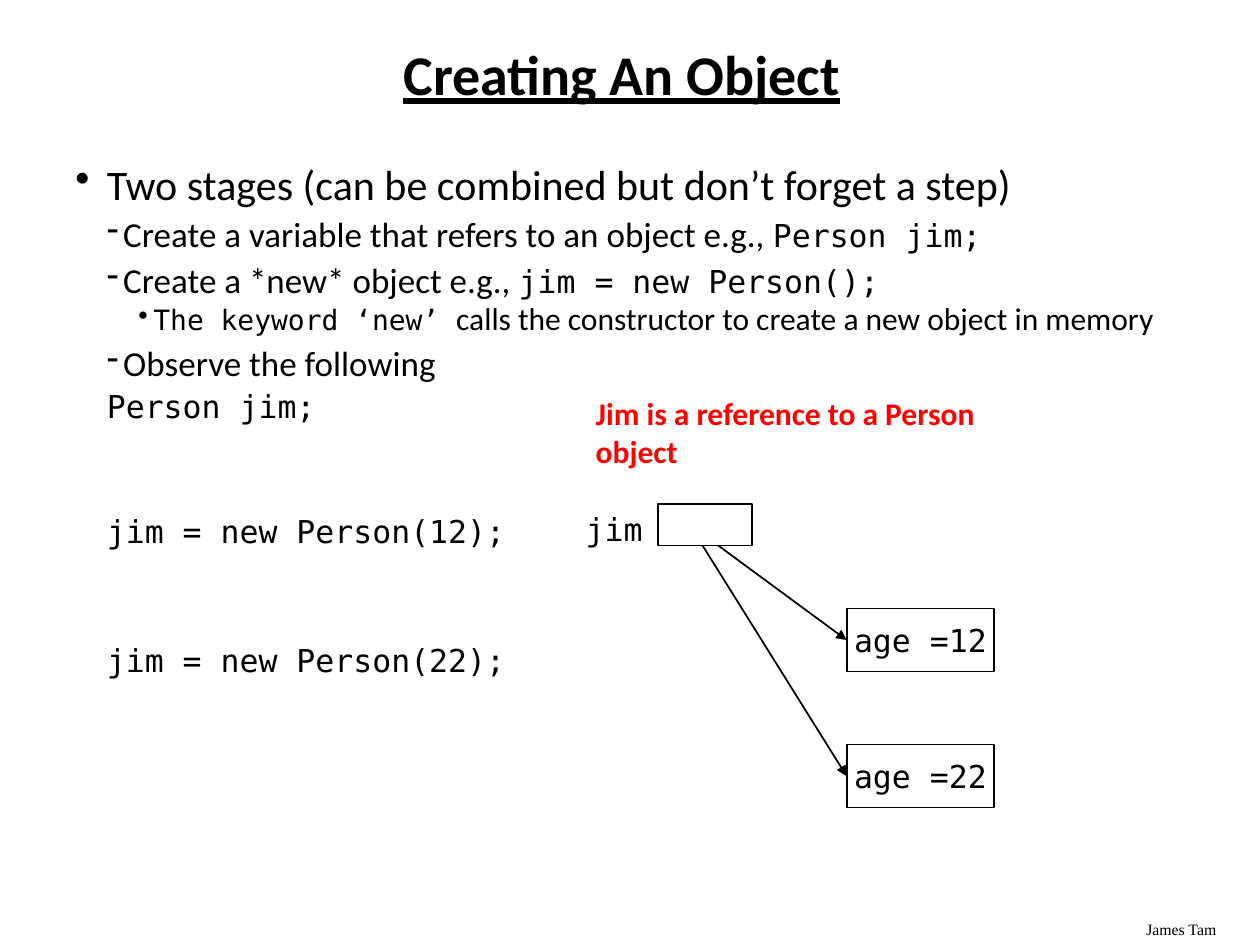
from dataclasses import dataclass

from lxml.etree import SubElement
from pptx import Presentation
from pptx.dml.color import RGBColor
from pptx.enum.shapes import MSO_CONNECTOR as Connector, MSO_SHAPE as Preset
from pptx.enum.text import MSO_ANCHOR as Anchor, PP_ALIGN as Align
from pptx.oxml.ns import qn
from pptx.util import Inches, Pt

BLACK = RGBColor(0, 0, 0)
WHITE = RGBColor(255, 255, 255)
RED = RGBColor(255, 0, 0)
SANS = "Calibri"
MONO = "DejaVu Sans Mono"
SERIF = "Times New Roman"


@dataclass(frozen=True)
class Span:
    text: str
    size: float = 18
    font: str = MONO
    color: RGBColor = BLACK
    bold: bool = False
    underline: bool = False


@dataclass(frozen=True)
class Item:
    spans: tuple[Span, ...]
    margin: float = 0.38
    hanging: float = 0.13
    bullet: str = ""
    before: float = 2
    line_spacing: float = 1


@dataclass(frozen=True)
class PersonBox:
    age: int
    top: float


CODE_GAP = 50
REFERENCE_START = (5.47, 4.16)
BODY = (
    Item((Span("Two stages (can be combined but don’t forget a step)", 24, SANS),),
         0.25, 0.25, "•", 0),
    Item((Span("Create a variable that refers to an object e.g., ", 20, SANS),
          Span("Person jim;")), bullet="-"),
    Item((Span("Create a *new* object e.g., ", 20, SANS),
          Span("jim = new Person();")), bullet="-"),
    Item((Span("The keyword ‘new’ ", 16),
          Span("calls the constructor to create a new object in memory", 18, SANS)),
         0.62, 0.12, "•", line_spacing=0.9),
    Item((Span("Observe the following", 20, SANS),), bullet="-"),
    Item((Span("Person jim;"),)),
    Item((Span("jim = new Person(12);"),), before=CODE_GAP),
    Item((Span("jim = new Person(22);"),), before=CODE_GAP + 2),
)
PEOPLE = (PersonBox(22, 5.91), PersonBox(12, 4.83))


def add_span(paragraph, span: Span) -> None:
    run = paragraph.add_run()
    run.text = span.text
    font = run.font
    font.name, font.size = span.font, Pt(span.size)
    font.bold, font.underline = span.bold, span.underline
    font.color.rgb = span.color


def add_text(slide, left: float, top: float, width: float, height: float):
    shape = slide.shapes.add_textbox(
        Inches(left), Inches(top), Inches(width), Inches(height))
    shape.text_frame.word_wrap = True
    return shape.text_frame


def add_item(paragraph, item: Item) -> None:
    paragraph.space_before = Pt(item.before)
    paragraph.line_spacing = item.line_spacing
    properties = paragraph._p.get_or_add_pPr()
    properties.set("marL", str(Inches(item.margin)))
    properties.set("indent", str(-Inches(item.hanging)))
    if item.bullet:
        SubElement(properties, qn("a:buChar")).set("char", item.bullet)
    for span in item.spans:
        add_span(paragraph, span)


def add_box(slide, left: float, top: float, width: float, height: float):
    shape = slide.shapes.add_shape(
        Preset.RECTANGLE, Inches(left), Inches(top), Inches(width), Inches(height))
    shape.shadow.inherit = False
    shape.fill.solid()
    shape.fill.fore_color.rgb = WHITE
    shape.line.color.rgb = BLACK
    shape.line.width = Pt(1)
    return shape


def add_person(slide, person: PersonBox) -> None:
    shape = add_box(slide, 6.72, person.top, 1.17, 0.5)
    frame = shape.text_frame
    frame.word_wrap = False
    frame.vertical_anchor = Anchor.MIDDLE
    paragraph = frame.paragraphs[0]
    paragraph.alignment = Align.CENTER
    add_span(paragraph, Span(f"age ={person.age}"))

    start_x, start_y = map(Inches, REFERENCE_START)
    arrow = slide.shapes.add_connector(
        Connector.STRAIGHT, start_x, start_y, shape.left, shape.top)
    arrow.end_connect(shape, 1)
    arrow.line.color.rgb = BLACK
    arrow.line.width = Pt(1)
    SubElement(arrow.line._get_or_add_ln(), qn("a:tailEnd")).set("type", "triangle")
    SubElement(arrow._element.spPr, qn("a:effectLst"))


def main() -> None:
    presentation = Presentation()
    presentation.slide_width = Inches(10)
    presentation.slide_height = Inches(7.5)
    slide = presentation.slides.add_slide(presentation.slide_layouts[6])

    footer = add_text(slide, 9, 7.25, 1, 0.25)
    add_span(footer.paragraphs[0], Span("James Tam", 9, SERIF))

    title = add_text(slide, 0.47, 0.33, 8.93, 0.57)
    title.vertical_anchor = Anchor.MIDDLE
    heading = title.paragraphs[0]
    heading.alignment = Align.CENTER
    heading.line_spacing = 0.9
    add_span(heading, Span("Creating An Object", 32, SANS, bold=True, underline=True))

    body = add_text(slide, 0.5, 1.21, 8.94, 4.31)
    for index, item in enumerate(BODY):
        add_item(body.add_paragraph() if index else body.paragraphs[0], item)

    variable = add_text(slide, 4.55, 4, 0.67, 0.4)
    add_span(variable.paragraphs[0], Span("jim"))
    note = add_text(slide, 4.63, 3.08, 3.5, 0.7)
    add_span(note.paragraphs[0],
             Span("Jim is a reference to a Person object", 18, SANS, RED, True))

    for person in PEOPLE:
        add_person(slide, person)
    add_box(slide, 5.22, 4, 0.75, 0.33)

    presentation.save("out.pptx")


if __name__ == "__main__":
    main()
